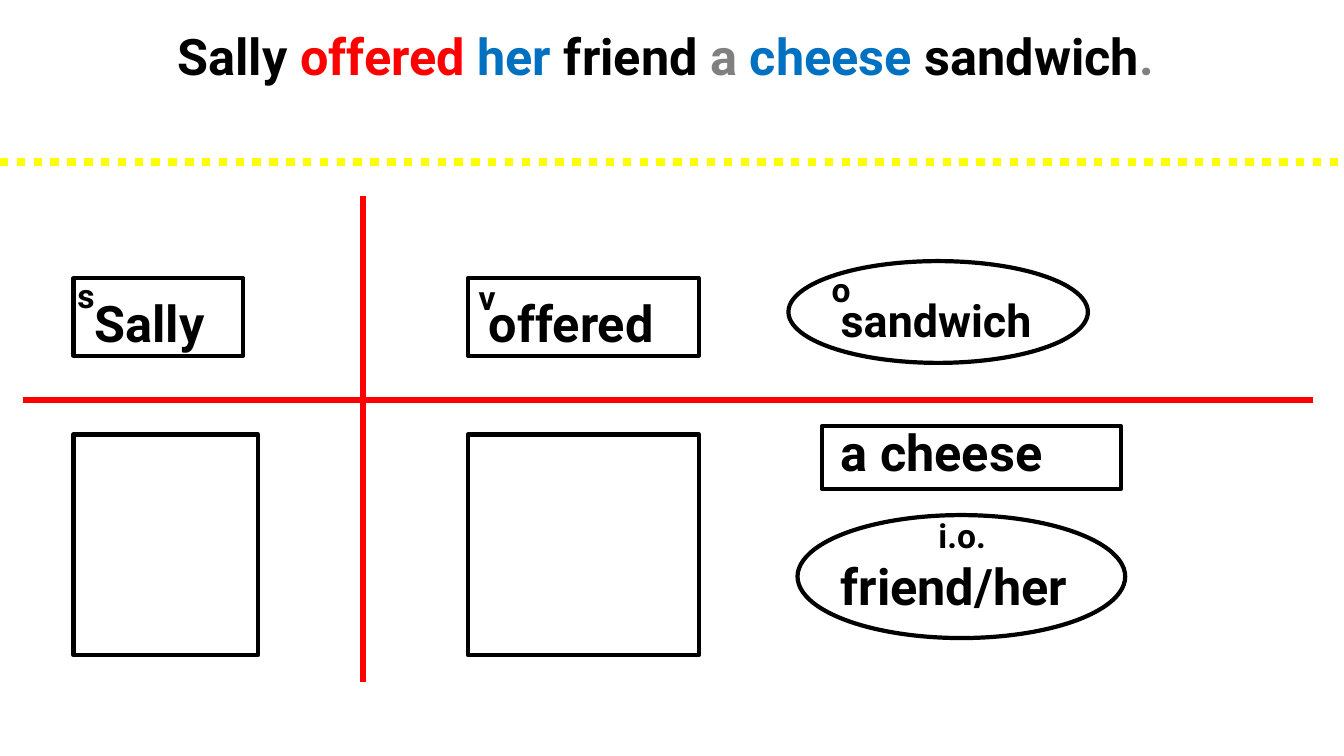
from pptx import Presentation
from pptx.dml.color import RGBColor
from pptx.enum.dml import MSO_LINE
from pptx.enum.shapes import MSO_CONNECTOR, MSO_SHAPE
from pptx.enum.text import PP_ALIGN
from pptx.oxml.ns import qn
from pptx.util import Inches, Pt

RECT, OVAL = MSO_SHAPE.RECTANGLE, MSO_SHAPE.OVAL
STRAIGHT, DOTS = MSO_CONNECTOR.STRAIGHT, MSO_LINE.ROUND_DOT
CENTER = PP_ALIGN.CENTER
W, H = 13.33, 7.5
SUBJECT, VERB, OBJECT = 0.73, 4.64, 8.24
TOP_ROW, LOWER_ROW = 2.76, 4.31
BLACK, RED, BLUE, GRAY, YELLOW = "000000", "FF0000", "0070C0", "808080", "FFFF00"


def rgb(color):
    return RGBColor.from_string(color)


def add_text(x, y, w, h, size, runs):
    tf = s.shapes.add_textbox(Inches(x), Inches(y), Inches(w), Inches(h)).text_frame
    tf.word_wrap = True
    p = tf.paragraphs[0]
    p.font.name, p.font.size, p.font.bold = "Roboto", Pt(size), True
    for text, color in runs:
        r = p.add_run()
        r.text = text
        r.font.color.rgb = rgb(color)
    return p


prs = Presentation()
prs.slide_width, prs.slide_height = Inches(W), Inches(H)
s = prs.slides.add_slide(prs.slide_layouts[6])

sentence = [("Sally ", BLACK), ("offered ", RED), ("her ", BLUE), ("friend", BLACK),
            (" a ", GRAY), ("cheese ", BLUE), ("sandwich", BLACK), (". ", GRAY)]
add_text(0, 0.2, W, 0.71, 36, sentence).alignment = CENTER

for x1, y1, x2, y2, color, width, dash in [
    (0, 1.61, W, 1.61, YELLOW, 6, DOTS),
    (0.23, 3.97, 13.02, 3.97, RED, 4.5, None),
    (3.6, 1.94, 3.6, 6.77, RED, 4.5, None),
]:
    line = s.shapes.add_connector(STRAIGHT, Inches(x1), Inches(y1), Inches(x2), Inches(y2))
    line.line.color.rgb = rgb(color)
    line.line.width = Pt(width)
    line.line.dash_style = dash
    spPr = line._element.spPr
    spPr.append(spPr.makeelement(qn("a:effectLst"), {}))

for kind, x, y, w, h in [
    (RECT, SUBJECT, TOP_ROW, 1.68, 0.77),
    (RECT, SUBJECT, LOWER_ROW, 1.83, 2.19),
    (RECT, VERB, TOP_ROW, 2.29, 0.77),
    (RECT, VERB, LOWER_ROW, 2.29, 2.19),
    (OVAL, 7.82, 2.59, 2.97, 1.01),
    (RECT, 8.15, 4.23, 2.97, 0.62),
    (OVAL, 7.91, 5.11, 3.25, 1.22),
]:
    sp = s.shapes.add_shape(kind, Inches(x), Inches(y), Inches(w), Inches(h))
    sp.shadow.inherit = False
    sp.fill.background()
    sp.line.color.rgb = rgb(BLACK)
    sp.line.width = Pt(3)

for text, x, y, w, h, size in [
    ("Sally", SUBJECT + 0.11, 2.85, 2, 0.71, 36),
    ("offered", VERB + 0.11, 2.85, 2.5, 0.71, 36),
    ("sandwich", OBJECT, 2.86, 2.6, 0.64, 32),
    ("a cheese", OBJECT, 4.13, 3, 0.71, 36),
    ("friend/her", OBJECT, 5.46, 3, 0.71, 36),
    ("s", 0.67, 2.68, 1, 0.5, 24),
    ("v", 4.65, 2.7, 1, 0.5, 24),
    ("o", 8.15, 2.62, 1, 0.5, 24),
    ("i.o.", 9.21, 5.06, 1, 0.5, 24),
]:
    add_text(x, y, w, h, size, [(text, BLACK)])

prs.save("out.pptx")
